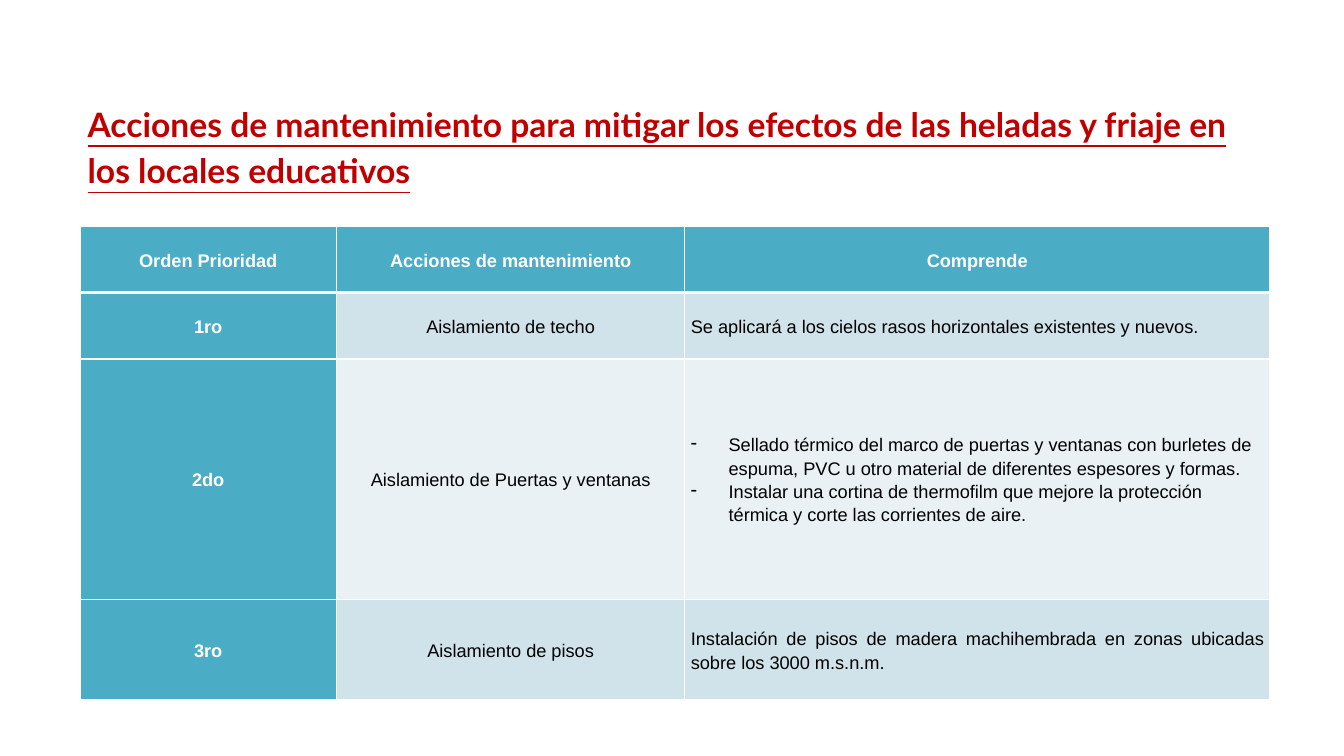
from lxml.etree import SubElement
from pptx import Presentation
from pptx.dml.color import RGBColor
from pptx.enum.text import MSO_ANCHOR, MSO_AUTO_SIZE, PP_ALIGN
from pptx.oxml.ns import qn
from pptx.util import Pt

RED = RGBColor(0xC0, 0x00, 0x00)
TEAL = RGBColor(0x4B, 0xAC, 0xC6)
PALE_BLUE = RGBColor(0xD0, 0xE3, 0xEA)
LIGHT_BLUE = RGBColor(0xE9, 0xF1, 0xF5)
WHITE = RGBColor(0xFF, 0xFF, 0xFF)
BLACK = RGBColor(0x00, 0x00, 0x00)

TITLE = ("Acciones de mantenimiento para mitigar los efectos de las heladas "
         "y friaje en los locales educativos")
COLUMN_WIDTHS = [183, 249, 417.6]
ROW_HEIGHTS = [47.5, 47.5, 171.5, 72]
ROWS = [
    ["Orden Prioridad", "Acciones de mantenimiento", "Comprende"],
    ["1ro", "Aislamiento de techo",
     "Se aplicará a los cielos rasos horizontales existentes y nuevos."],
    ["2do", "Aislamiento de Puertas y ventanas",
     ["Sellado térmico del marco de puertas y ventanas con burletes de espuma, "
      "PVC u otro material de diferentes espesores y formas.",
      "Instalar una cortina de thermofilm que mejore la protección térmica "
      "y corte las corrientes de aire."]],
    ["3ro", "Aislamiento de pisos",
     "Instalación de pisos de madera machihembrada en zonas ubicadas "
     "sobre los 3000 m.s.n.m."],
]


def add_run(paragraph, text, font_name, size, color, bold):
    """Add one formatted run to a paragraph and return it."""
    run = paragraph.add_run()
    run.text = text
    run.font.name = font_name
    run.font.size = Pt(size)
    run.font.bold = bold
    run.font.color.rgb = color
    return run


def add_dash(paragraph):
    """Give a paragraph a hanging dash bullet."""
    properties = paragraph._p.get_or_add_pPr()
    properties.set("marL", str(Pt(27)))
    properties.set("indent", str(-Pt(27)))
    SubElement(properties, qn("a:buChar"), char="-")


def set_borders(cell, bottom_width):
    """Draw white borders around a cell."""
    properties = cell._tc.get_or_add_tcPr()
    for side, width in (("L", 1), ("R", 1), ("T", 1), ("B", bottom_width)):
        line = SubElement(properties, qn(f"a:ln{side}"), w=str(Pt(width)))
        fill = SubElement(line, qn("a:solidFill"))
        SubElement(fill, qn("a:srgbClr"), val=str(WHITE))


def fill_cell(cell, content, color, heading, alignment, bottom_width):
    """Write and format a cell; a list becomes dashed paragraphs."""
    set_borders(cell, bottom_width)
    cell.fill.solid()
    cell.fill.fore_color.rgb = color
    cell.vertical_anchor = MSO_ANCHOR.MIDDLE
    cell.margin_left = cell.margin_right = Pt(4.3)
    cell.margin_top = cell.margin_bottom = Pt(0)
    dashed = isinstance(content, list)
    for index, text in enumerate(content if dashed else [content]):
        frame = cell.text_frame
        paragraph = frame.add_paragraph() if index else frame.paragraphs[0]
        if dashed:
            add_dash(paragraph)
        paragraph.alignment = PP_ALIGN.LEFT if dashed else alignment
        paragraph.line_spacing = 1.15
        add_run(paragraph, text, "Arial", 13, WHITE if heading else BLACK, heading)


def add_title(slide):
    """Place the underlined title in the title placeholder."""
    title = slide.shapes.title
    title.left, title.top, title.width, title.height = Pt(55.4), Pt(66.2), Pt(851), Pt(72.7)
    frame = title.text_frame
    frame.word_wrap = True
    frame.auto_size = MSO_AUTO_SIZE.NONE
    frame.vertical_anchor = MSO_ANCHOR.TOP
    paragraph = frame.paragraphs[0]
    paragraph.alignment = PP_ALIGN.LEFT
    paragraph.line_spacing = 1.15
    add_run(paragraph, TITLE, "Lato", 24, RED, True).font.underline = True


def add_actions_table(slide):
    """Add the table of maintenance actions by priority."""
    frame = slide.shapes.add_table(len(ROWS), len(COLUMN_WIDTHS), Pt(57.2), Pt(161.5),
                                   Pt(sum(COLUMN_WIDTHS)), Pt(sum(ROW_HEIGHTS)))
    table = frame.table
    table.first_col = True
    for column, width in zip(table.columns, COLUMN_WIDTHS):
        column.width = Pt(width)
    for row, height in zip(table.rows, ROW_HEIGHTS):
        row.height = Pt(height)
    for row_index, contents in enumerate(ROWS):
        header = row_index == 0
        band = PALE_BLUE if row_index % 2 else LIGHT_BLUE
        for column_index, content in enumerate(contents):
            heading = header or column_index == 0
            justified = column_index == 2 and not header
            fill_cell(table.cell(row_index, column_index), content,
                      TEAL if heading else band, heading,
                      PP_ALIGN.JUSTIFY if justified else PP_ALIGN.CENTER,
                      3 if header else 1)


def main():
    """Build and save the slide."""
    presentation = Presentation()
    presentation.slide_width, presentation.slide_height = Pt(960), Pt(540)
    slide = presentation.slides.add_slide(presentation.slide_layouts[5])
    add_title(slide)
    add_actions_table(slide)
    presentation.save("out.pptx")


if __name__ == "__main__":
    main()
